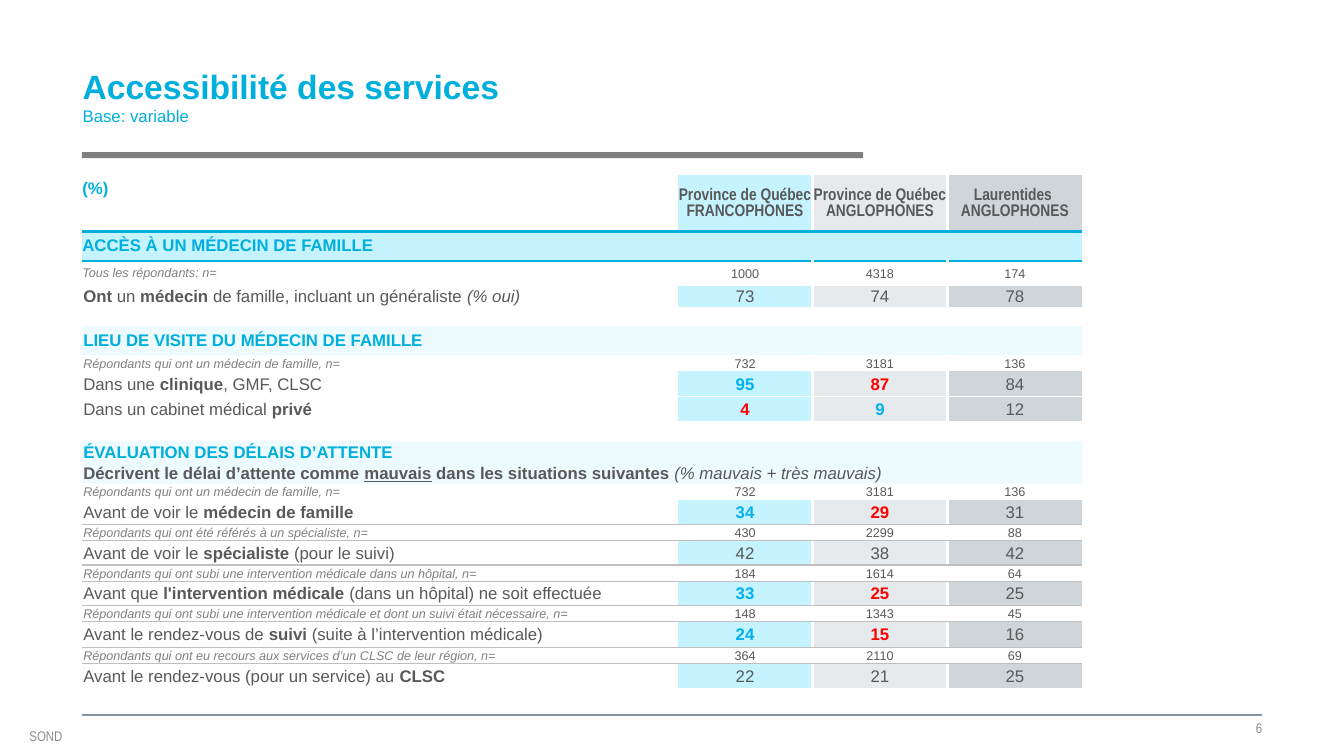
from dataclasses import dataclass

from lxml.etree import SubElement
from pptx import Presentation
from pptx.dml.color import RGBColor as RGB
from pptx.enum.shapes import MSO_CONNECTOR as CONN, MSO_SHAPE as SHAPE
from pptx.enum.text import MSO_ANCHOR as ANCHOR, MSO_AUTO_SIZE as AUTO, PP_ALIGN as ALIGN
from pptx.oxml.ns import qn
from pptx.util import Pt


@dataclass(frozen=True)
class Theme:
    font: str = "Arial"
    narrow: str = "Arial Narrow"
    accent: str = "00AFDC"
    text: str = "595959"
    muted: str = "808080"
    footer: str = "8C8C8C"
    bar: str = "7F7F7F"
    base_line: str = "88959E"
    rule: str = "BFBFBF"
    white: str = "FFFFFF"
    high: str = "00B0F0"
    low: str = "FF0000"
    band: str = "C5F3FF"
    columns: tuple = ("C5F3FF", "E7EAEC", "CFD5D8")
    title_size: int = 24
    body_size: int = 12
    footer_size: int = 10
    note_size: int = 9
    tiny_size: int = 4
    no_style: str = "{2D5ABB26-0587-4C30-8999-92F81FD0307C}"


T = Theme()

HEADERS = ["Province de Québec FRANCOPHONES", "Province de Québec ANGLOPHONES",
           "Laurentides \nANGLOPHONES"]
FAMILY_NOTE = "Répondants qui ont un médecin de famille, n="

ROWS = [
    ("head", 40.5, [("(%)", "b")], HEADERS, T.accent),
    ("band", 21, [("ACCÈS À UN MÉDECIN DE FAMILLE", "b")], [], None),
    ("note", 17, [("Tous les répondants: n=", "i")], ["1000", "4318", "174"], None),
    ("item", 14.2, [("Ont ", "b"), ("un ", ""), ("médecin", "b"),
                    (" de famille, incluant un généraliste ", ""), ("(% oui)", "i")],
     ["73", "74", "78"], None),
    ("gap", 13.6, [], [], None),
    ("band", 21, [("LIEU DE VISITE DU MÉDECIN DE FAMILLE", "b")], [], None),
    ("note", 11.5, [(FAMILY_NOTE, "i")], ["732", "3181", "136"], None),
    ("item", 18, [("Dans une ", ""), ("clinique", "b"), (", GMF, CLSC", "")],
     ["95+", "87-", "84"], T.white),
    ("item", 18, [("Dans un cabinet médical ", ""), ("privé", "b")],
     ["4-", "9+", "12"], None),
    ("gap", 14, [], [], None),
    ("open band", 14.4, [("ÉVALUATION DES DÉLAIS D’ATTENTE", "b")], [], None),
    ("question", 14, [("Décrivent le délai d’attente comme ", "b"), ("mauvais", "bu"),
                      (" dans les situations suivantes ", "b"),
                      ("(% mauvais + très mauvais)", "i")], [], None),
    ("note", 11, [(FAMILY_NOTE, "i")], ["732", "3181", "136"], None),
    ("item", 17.5, [("Avant de voir le ", ""), ("médecin de famille", "b")],
     ["34+", "29-", "31"], T.rule),
    ("note", 11, [("Répondants qui ont été référés à un spécialiste, n=", "i")],
     ["430", "2299", "88"], None),
    ("item", 17.5, [("Avant de voir le ", ""), ("spécialiste ", "b"), ("(pour le suivi)", "")],
     ["42", "38", "42"], T.rule),
    ("note", 11, [("Répondants qui ont subi une intervention médicale dans un hôpital, n=", "i")],
     ["184", "1614", "64"], None),
    ("item", 17.5, [("Avant que ", ""), ("l'intervention médicale ", "b"),
                    ("(dans un hôpital) ne soit effectuée", "")],
     ["33+", "25-", "25"], T.rule),
    ("note", 11, [("Répondants qui ont subi une intervention médicale et dont "
                   "un suivi était nécessaire, n=", "i")], ["148", "1343", "45"], None),
    ("item", 18, [("Avant le rendez-vous de ", ""), ("suivi ", "b"),
                  ("(suite à l’intervention médicale)", "")],
     ["24+", "15-", "16"], T.rule),
    ("note", 11, [("Répondants qui ont eu recours aux services d’un CLSC de leur région, n=", "i")],
     ["364", "2110", "69"], None),
    ("item", 18, [("Avant le rendez-vous (pour un service) au ", ""), ("CLSC", "b")],
     ["22", "21", "25"], None),
]


def add_text(p, text, size=T.body_size, color=T.text, font=T.font, flags=""):
    r = p.add_run()
    r.text = text
    f = r.font
    f.name, f.size, f.color.rgb = font, Pt(size), RGB.from_string(color)
    f.bold, f.italic, f.underline = "b" in flags, "i" in flags, "u" in flags


def set_margins(obj, x=0, top=0, bottom=0):
    obj.margin_left = obj.margin_right = Pt(x)
    obj.margin_top, obj.margin_bottom = Pt(top), Pt(bottom)


def set_fill(cell, color, alpha=None):
    if color is None:
        cell.fill.background()
        return
    cell.fill.solid()
    cell.fill.fore_color.rgb = RGB.from_string(color)
    if alpha:
        clr = cell._tc.get_or_add_tcPr().find(".//" + qn("a:solidFill") + "[last()]/" + qn("a:srgbClr"))
        SubElement(clr, qn("a:alpha"), val=str(alpha * 1000))


def set_borders(cell, **sides):
    tc_pr = cell._tc.get_or_add_tcPr()
    for side in "LRTB":
        if sides.get(side):
            color, width = sides[side]
            ln = SubElement(tc_pr, qn("a:ln" + side), w=str(Pt(width)))
            SubElement(SubElement(ln, qn("a:solidFill")), qn("a:srgbClr"), val=color)


class Page:
    def __init__(self, prs, theme):
        self.t = theme
        self.s = prs.slides.add_slide(prs.slide_layouts[5])

    def title(self, text, subtitle, x, y, w, h):
        sp = self.s.shapes.title
        sp.left, sp.top, sp.width, sp.height = Pt(x), Pt(y), Pt(w), Pt(h)
        tf = sp.text_frame
        tf.auto_size, tf.vertical_anchor = AUTO.NONE, ANCHOR.MIDDLE
        set_margins(tf)
        p = tf.paragraphs[0]
        p.alignment = ALIGN.LEFT
        add_text(p, text, self.t.title_size, self.t.accent, flags="b")
        p.add_line_break()
        add_text(p, subtitle, color=self.t.accent)

    def bar(self, x, y, w, h):
        sp = self.s.shapes.add_shape(SHAPE.RECTANGLE, Pt(x), Pt(y), Pt(w), Pt(h))
        sp.shadow.inherit = False
        sp.fill.solid()
        sp.fill.fore_color.rgb = RGB.from_string(self.t.bar)
        sp.line.fill.background()

    def line(self, x1, x2, y):
        c = self.s.shapes.add_connector(CONN.STRAIGHT, Pt(x1), Pt(y), Pt(x2), Pt(y))
        c.line.color.rgb, c.line.width = RGB.from_string(self.t.base_line), Pt(1.5)
        SubElement(c._element.spPr, qn("a:effectLst"))

    def footer(self, text, x, y, w, h, align=ALIGN.LEFT):
        tf = self.s.shapes.add_textbox(Pt(x), Pt(y), Pt(w), Pt(h)).text_frame
        tf.word_wrap, tf.vertical_anchor = True, ANCHOR.MIDDLE
        set_margins(tf)
        tf.paragraphs[0].alignment = align
        add_text(tf.paragraphs[0], text, self.t.footer_size, self.t.footer, self.t.narrow)

    def label(self, cell, kind, runs, spaced):
        cell.vertical_anchor = ANCHOR.MIDDLE
        p = cell.text_frame.paragraphs[0]
        if spaced:
            set_margins(cell, 0, 3.6, 3.6)
            p.line_spacing = 0.95
            if kind != "note":
                cell.vertical_anchor = ANCHOR.TOP
        size = self.t.note_size if kind == "note" else self.t.body_size
        color = {"note": self.t.muted, "item": self.t.text,
                 "question": self.t.text}.get(kind, self.t.accent)
        for text, flags in runs:
            add_text(p, text, size, color, flags=flags)

    def value(self, cell, kind, value):
        cell.vertical_anchor = ANCHOR.MIDDLE
        tf = cell.text_frame
        for i, text in enumerate(value.split("\n")):
            p = tf.add_paragraph() if i else tf.paragraphs[0]
            p.alignment = ALIGN.CENTER
            if kind == "head":
                add_text(p, text, font=self.t.narrow, flags="b")
            elif kind == "note":
                add_text(p, text, self.t.note_size)
            else:
                color = {"+": self.t.high, "-": self.t.low}.get(text[-1])
                add_text(p, text.rstrip("+-"), color=color or self.t.text,
                         flags="b" if color else "")

    def table(self, rows, x, y, widths):
        height = sum(row[1] for row in rows)
        tbl = self.s.shapes.add_table(len(rows), len(widths), Pt(x), Pt(y),
                                      Pt(sum(widths)), Pt(height)).table
        tbl.first_row = tbl.horz_banding = False
        tbl._tbl.tblPr.find(qn("a:tableStyleId")).text = self.t.no_style
        for col, width in zip(tbl.columns, widths):
            col.width = Pt(width)
        above = None
        for i, (kind, h, runs, values, rule) in enumerate(rows):
            tbl.rows[i].height = Pt(h)
            below = rule and (rule, 2.25 if kind == "head" else 1)
            banded = kind in ("band", "open band", "question")
            for j in range(len(widths)):
                cell = tbl.cell(i, j)
                set_margins(cell, 0.72, 0.72)
                gap = None if banded else (self.t.white, 2.25)
                set_borders(cell, L=gap if j > 1 else None,
                            R=gap if 0 < j < len(widths) - 1 else None, T=above, B=below)
                if banded:
                    set_fill(cell, self.t.band, 30)
                elif j and kind in ("head", "item"):
                    set_fill(cell, self.t.columns[j - 1])
                else:
                    set_fill(cell, None)
                if j == 0 and runs:
                    self.label(cell, kind, runs, spaced=i < 3)
                elif j and values:
                    self.value(cell, kind, values[j - 1])
                else:
                    SubElement(cell.text_frame.paragraphs[0]._p, qn("a:endParaRPr"),
                               sz=str(self.t.tiny_size * 100))
            if kind in ("band", "question"):
                tbl.cell(i, 0).merge(tbl.cell(i, len(widths) - 1))
            above = below


def main():
    prs = Presentation()
    prs.slide_width, prs.slide_height = Pt(960), Pt(540)
    page = Page(prs, T)
    page.line(58.5, 901.5, 510.5)
    page.bar(58.5, 108.7, 558, 4.3)
    page.title("Accessibilité des services", "Base: variable", 59, 28.8, 586, 79.2)
    page.footer("SOND", 21, 518.4, 29.5, 15)
    page.footer("6", 628.5, 510.5, 273, 18.7, ALIGN.RIGHT)
    page.table(ROWS, 58.8, 125, [425.2] + [96.4] * 3)
    prs.save("out.pptx")


if __name__ == "__main__":
    main()
